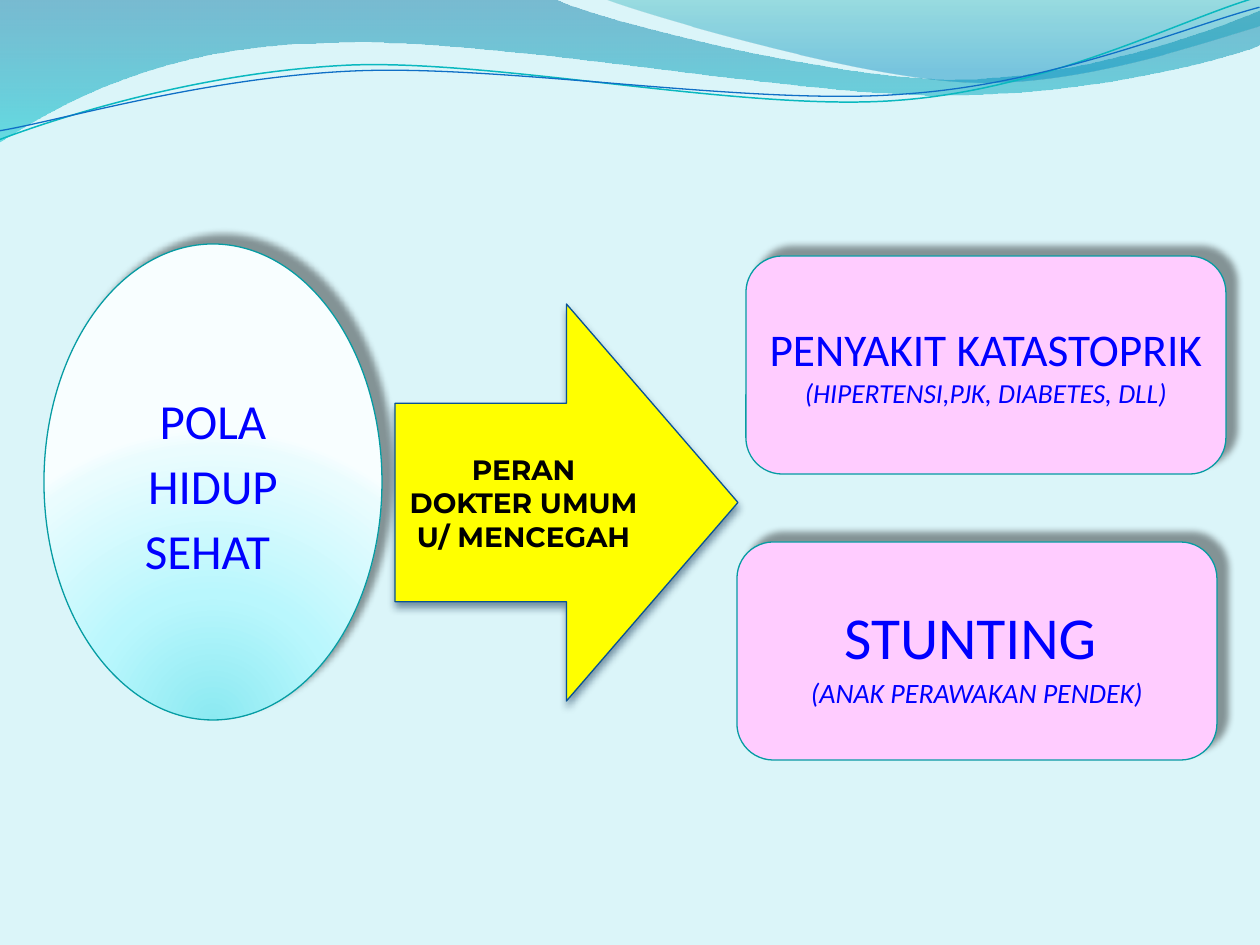
"""Build the slide on a healthy lifestyle, the doctor's role and the illnesses it prevents."""
from lxml import etree
from pptx import Presentation
from pptx.dml.color import RGBColor
from pptx.enum import shapes, text
from pptx.oxml import ns
from pptx.util import Pt

PX = 914400 / 126
COLORS = {
    "background": "DBF5F9", "pink": "FFCCFF", "yellow": "FFFF00",
    "blue": "0000FF", "black": "000000", "navy": "042747",
    "teal edge": "069CA3", "arrow edge": "095295",
    "teal line": "0AB8BF", "blue line": "0F6FC6",
}
rgb = {name: RGBColor.from_string(value) for name, value in COLORS.items()}


def draw_wave(canvas, start, *segments, close=False):
    points = [(round(x * PX), round(y * PX))
              for part in (start, *segments) for x, y in zip(part[::2], part[1::2])]
    builder = canvas.build_freeform(*points[0], scale=1.0)
    builder.add_line_segments(points[1:], close=close)
    wave = builder.convert_to_shape()
    wave.shadow.inherit = False
    corners = iter(wave._element.findall(".//" + ns.qn("a:lnTo")))
    for segment in segments:
        first = next(corners)
        if len(segment) == 6:
            first.tag = ns.qn("a:cubicBezTo")
            for _ in range(2):
                control = next(corners)
                first.append(control[0])
                control.getparent().remove(control)
    return wave


def fill_gradient(shape, stops, direction):
    shape.fill.gradient()
    gradient = shape._element.spPr.find(ns.qn("a:gradFill"))
    gradient.clear()
    stop_xml = "".join(
        f'<a:gs pos="{pos * 1000}"><a:srgbClr val="{color}">'
        f'<a:alpha val="{alpha * 1000}"/></a:srgbClr></a:gs>'
        for pos, color, alpha in stops)
    parts = etree.fromstring(
        f'<a:gradFill {ns.nsdecls("a")}><a:gsLst>{stop_xml}</a:gsLst>{direction}</a:gradFill>')
    gradient.extend(list(parts))


prs = Presentation()
prs.slide_width, prs.slide_height = round(1260 * PX), round(945 * PX)
slide = prs.slides.add_slide(prs.slide_layouts[6])
slide.background.fill.solid()
slide.background.fill.fore_color.rgb = rgb["background"]

downward = '<a:lin ang="5400000" scaled="0"/>'
bands = [
    ([(0, 0), (554, -1), (600, 21, 837, 79, 955, 79), (1075, 79, 1207, 33, 1260, 11),
      (1261, 45), (1239, 55, 1096, 96, 940, 95), (784, 95, 481, 35, 324, 43),
      (163, 45, 58, 105, -1, 142), (0, 0)],
     [(0, "0074A1", 45), (100, "00C6CF", 55)]),
    ([(604, -1), (641, 14, 859, 78, 969, 82), (1079, 87, 1211, 40, 1260, 26),
      (1260, 0), (604, -1)],
     [(0, "00A1A9", 30), (80, "008BBF", 45)]),
]
for outline, stops in bands:
    band = draw_wave(slide.shapes, *outline, close=True)
    fill_gradient(band, stops, downward)
    band.line.fill.background()

strands = [
    ("teal line", 0.85, [(-3, 110), (59, 90, 200, 52, 350, 52), (498, 53, 745, 118, 897, 113),
                         (1048, 109, 1184, 45, 1260, 27)]),
    ("blue line", 0.75, [(-2, 101), (58, 94, 207, 57, 357, 58), (508, 59, 751, 112, 902, 107),
                         (1052, 104, 1187, 53, 1262, 37)]),
]
for color, width, outline in strands:
    strand = draw_wave(slide.shapes, *outline)
    strand.rotation = 357.3
    strand.fill.background()
    strand.line.color.rgb = rgb[color]
    strand.line.width = Pt(width)

kinds = shapes.MSO_SHAPE
soft = ("black", 40, 4, 8, 315)
under = ("navy", 48, 4.5, 3, 90)
figures = [
    (kinds.OVAL, (44, 244, 338, 476), None, "teal edge", soft, 1.1,
     [("POLA HIDUP SEHAT ", "Calibri", 28, "blue", False, False)]),
    (kinds.ROUNDED_RECTANGLE, (737, 542, 480, 218), "pink", "teal edge", soft, 1.1,
     [("STUNTING ", "Calibri", 34, "blue", False, False),
      ("(ANAK PERAWAKAN PENDEK)", "Calibri", 16, "blue", False, True)]),
    (kinds.RIGHT_ARROW, (395, 304, 343, 397), "yellow", "arrow edge", under, 1.0,
     [("PERAN DOKTER UMUM U/ MENCEGAH", "Montserrat", 16, "black", True, False)]),
    (kinds.ROUNDED_RECTANGLE, (746, 256, 480, 218), "pink", "teal edge", soft, 1.0,
     [("PENYAKIT KATASTOPRIK", "Calibri", 25.9, "blue", False, False),
      ("(HIPERTENSI,PJK, DIABETES, DLL)", "Calibri", 15.7, "blue", False, True)]),
]
for kind, box, fill, edge, shade, spacing, lines in figures:
    figure = slide.shapes.add_shape(kind, *(round(side * PX) for side in box))
    if fill:
        figure.fill.solid()
        figure.fill.fore_color.rgb = rgb[fill]
    else:
        fill_gradient(
            figure,
            [(0, "8BE9F1", 100), (43, "B9F7FD", 100), (93, "EAFCFE", 100), (100, "F8FEFF", 100)],
            '<a:path path="circle"><a:fillToRect l="50000" t="130000" r="50000" b="-30000"/></a:path>')
    figure.line.color.rgb = rgb[edge]
    figure.line.width = Pt(0.75)

    figure.shadow.inherit = False
    color, alpha, blur, distance, angle = shade
    figure._element.spPr.find(ns.qn("a:effectLst")).append(etree.fromstring(
        f'<a:outerShdw {ns.nsdecls("a")} blurRad="{Pt(blur)}" dist="{Pt(distance)}" '
        f'dir="{angle * 60000}" algn="ctr" rotWithShape="0"><a:srgbClr val="{COLORS[color]}">'
        f'<a:alpha val="{alpha * 1000}"/></a:srgbClr></a:outerShdw>'))

    frame = figure.text_frame
    frame.word_wrap = True
    frame.vertical_anchor = text.MSO_ANCHOR.MIDDLE
    for index, (words, font, size, ink, bold, italic) in enumerate(lines):
        paragraph = frame.add_paragraph() if index else frame.paragraphs[0]
        paragraph.alignment = text.PP_ALIGN.CENTER
        paragraph.line_spacing = spacing
        run = paragraph.add_run()
        run.text = words
        run.font.name, run.font.size = font, Pt(size)
        run.font.bold, run.font.italic = bold, italic
        run.font.color.rgb = rgb[ink]

prs.save("out.pptx")
